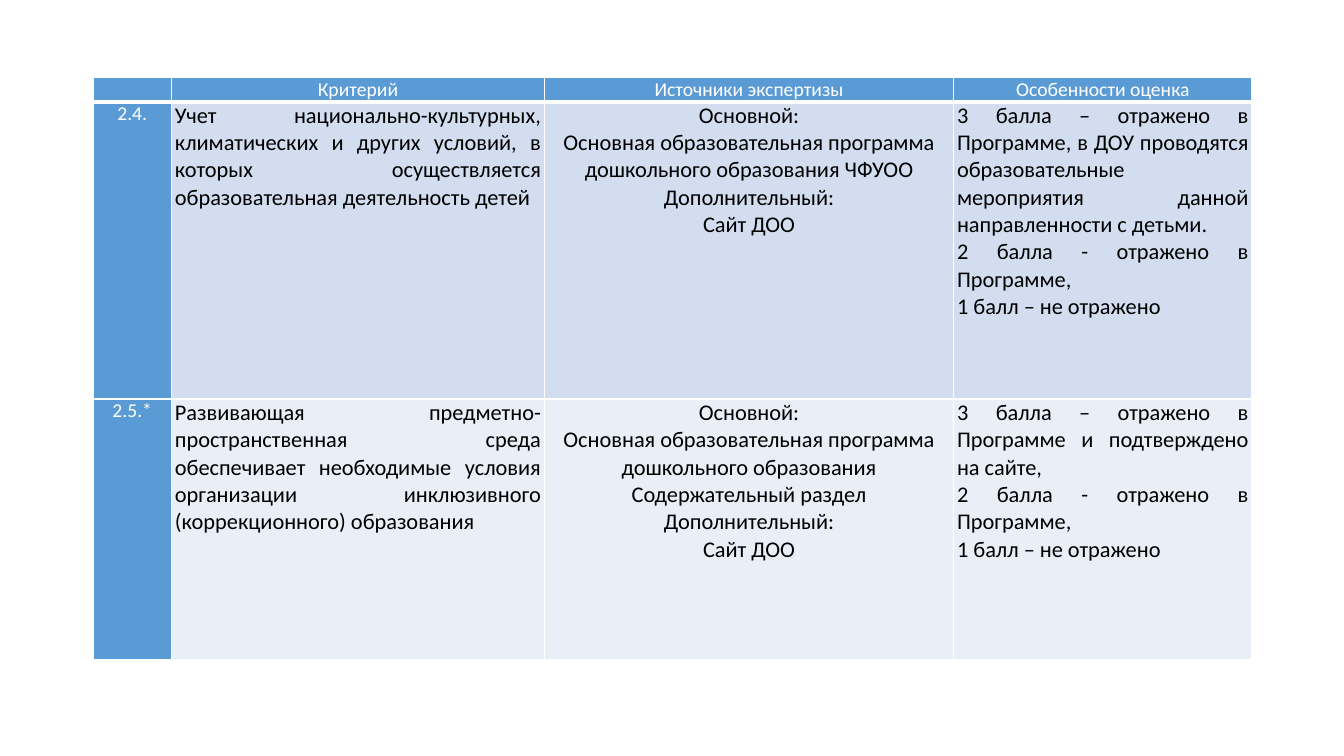
"""Builds a slide with a table of assessment criteria, sources and scores."""
from lxml.etree import SubElement
from pptx import Presentation
from pptx.dml.color import RGBColor
from pptx.enum.text import PP_ALIGN as Align
from pptx.oxml.ns import qn
from pptx.util import Pt

WHITE = RGBColor(0xFF, 0xFF, 0xFF)
BLACK = RGBColor(0x00, 0x00, 0x00)
BLUE = RGBColor(0x5B, 0x9B, 0xD5)
BANDS = [RGBColor(0xD2, 0xDE, 0xEF), RGBColor(0xEA, 0xEF, 0xF7)]
FONT = "Calibri"

ROWS = [
    [[""], ["Критерий"], ["Источники экспертизы"], ["Особенности оценка"]],
    [
        ["2.4."],
        ["Учет национально-культурных, климатических и других условий, в которых "
         "осуществляется образовательная деятельность детей"],
        ["Основной:",
         "Основная образовательная программа дошкольного образования ЧФУОО",
         "Дополнительный:",
         "Сайт ДОО"],
        ["3 балла – отражено в Программе, в ДОУ проводятся образовательные "
         "мероприятия данной направленности с детьми.",
         "2 балла - отражено в Программе,",
         "1 балл – не отражено"],
    ],
    [
        ["2.5.*"],
        ["Развивающая предметно-пространственная среда обеспечивает необходимые "
         "условия организации инклюзивного (коррекционного) образования"],
        ["Основной:",
         "Основная образовательная программа дошкольного образования",
         "Содержательный раздел",
         "Дополнительный:",
         "Сайт ДОО"],
        ["3 балла – отражено в Программе и подтверждено на сайте,",
         "2 балла - отражено в Программе,",
         "1 балл – не отражено"],
    ],
]
LEFT, TOP = 66.4, 55.6
WIDTHS = [56.2, 266.4, 292.3, 213.1]
HEIGHTS = [16.8, 212.4, 185.8]
BODY_ALIGN = [Align.CENTER, Align.JUSTIFY, Align.CENTER, Align.JUSTIFY]


def add_border(cell, side, width):
    """Draws one white edge of a cell."""
    line = SubElement(cell._tc.get_or_add_tcPr(), qn(f"a:ln{side}"), w=str(Pt(width)))
    fill = SubElement(line, qn("a:solidFill"))
    SubElement(fill, qn("a:srgbClr"), val=str(WHITE))


def write_cell(cell, lines, *, size, color, align):
    """Writes the lines as paragraphs of a cell."""
    cell.margin_left = cell.margin_right = Pt(2.4)
    cell.margin_top = cell.margin_bottom = Pt(0)
    frame = cell.text_frame
    for index, text in enumerate(lines):
        para = frame.paragraphs[0] if index == 0 else frame.add_paragraph()
        para.alignment = align
        if not text:
            SubElement(para._p, qn("a:endParaRPr"), sz=str(size * 100))
            continue
        span = para.add_run()
        span.text = text
        span.font.name = FONT
        span.font.size = Pt(size)
        span.font.bold = False
        span.font.color.rgb = color


def main():
    """Creates the deck and saves it."""
    deck = Presentation()
    deck.slide_width, deck.slide_height = Pt(960), Pt(540)
    page = deck.slides.add_slide(deck.slide_layouts[6])
    table = page.shapes.add_table(
        len(HEIGHTS), len(WIDTHS), Pt(LEFT), Pt(TOP), Pt(sum(WIDTHS)), Pt(sum(HEIGHTS))
    ).table
    for column, width in zip(table.columns, WIDTHS):
        column.width = Pt(width)
    for row, height in zip(table.rows, HEIGHTS):
        row.height = Pt(height)

    for row_index, row in enumerate(ROWS):
        for column_index, lines in enumerate(row):
            cell = table.cell(row_index, column_index)
            is_header = row_index == 0
            is_label = is_header or column_index == 0
            for side in "LRTB":
                add_border(cell, side, 3 if is_header and side == "B" else 1)
            cell.fill.solid()
            cell.fill.fore_color.rgb = BLUE if is_label else BANDS[row_index - 1]
            write_cell(
                cell,
                lines,
                size=14 if is_label else 16,
                color=WHITE if is_label else BLACK,
                align=Align.CENTER if is_header else BODY_ALIGN[column_index],
            )
    deck.save("out.pptx")


if __name__ == "__main__":
    main()
